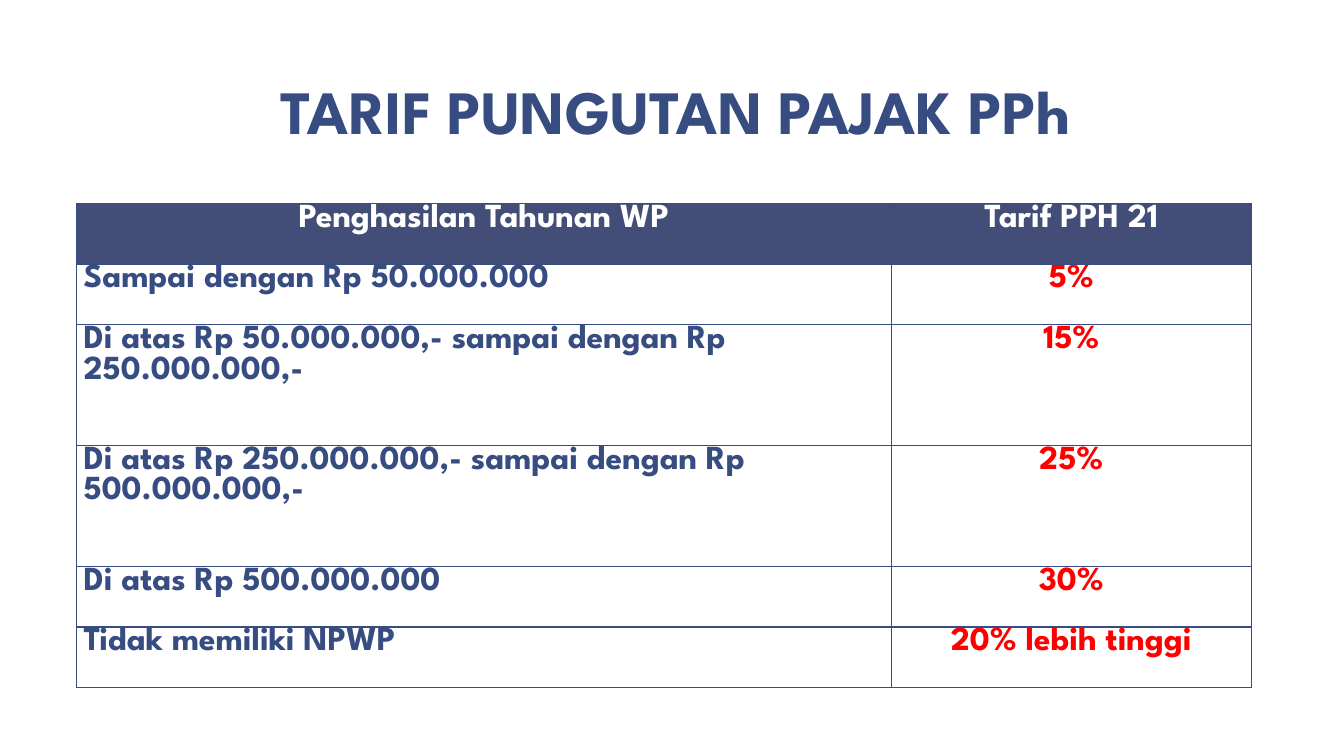
from lxml.etree import SubElement as Sub
from pptx import Presentation
from pptx.dml.color import RGBColor
from pptx.enum.text import MSO_ANCHOR as Anchor, PP_ALIGN as Align
from pptx.oxml.ns import qn
from pptx.util import Inches, Pt

TITLE = "TARIF PUNGUTAN PAJAK PPh"
ROWS = [
    ("Penghasilan Tahunan WP", "Tarif PPH 21"),
    ("Sampai dengan Rp 50.000.000", "5%"),
    ("Di atas Rp 50.000.000,- sampai dengan Rp 250.000.000,-", "15%"),
    ("Di atas Rp 250.000.000,- sampai dengan Rp 500.000.000,-", "25%"),
    ("Di atas Rp 500.000.000", "30%"),
    ("Tidak memiliki NPWP", "20% lebih tinggi"),
]
LINES = (1, 1, 2, 2, 1, 1)
UNIT = 0.6
COLS = (8.08, 3.57)
FONT = "League Spartan"
NAVY, HEAD, RED, WHITE = "374C81", "424E77", "FF0000", "FFFFFF"


def color(code):
    return RGBColor.from_string(code)


def write(frame, text, size, code, align):
    para = frame.paragraphs[0]
    para.alignment = align
    run = para.add_run()
    run.text = text
    font = run.font
    font.name, font.size, font.bold = FONT, Pt(size), True
    font.color.rgb = color(code)
    return para


def border(cell):
    """Draw a one-point line on all four sides; call before filling."""
    props = cell._tc.get_or_add_tcPr()
    for side in ("lnL", "lnR", "lnT", "lnB"):
        line = Sub(props, qn("a:" + side), w=str(Pt(1)))
        fill = Sub(line, qn("a:solidFill"))
        Sub(fill, qn("a:srgbClr"), val=NAVY)


def add_title(slide):
    box = slide.shapes.add_textbox(*map(Inches, (1.15, 0.6, 11.11, 0.93)))
    frame = box.text_frame
    frame.word_wrap = True
    frame.vertical_anchor = Anchor.BOTTOM
    frame.margin_left = frame.margin_right = Inches(0.13)
    frame.margin_top = frame.margin_bottom = Inches(0.07)
    write(frame, TITLE, 44, NAVY, Align.CENTER).line_spacing = 0.85


def add_rates(slide):
    area = (0.76, 2.02, sum(COLS), UNIT * sum(LINES))
    table = slide.shapes.add_table(
        len(ROWS), len(COLS), *map(Inches, area)).table
    table.horz_banding = False
    for col, width in zip(table.columns, COLS):
        col.width = Inches(width)
    for r, (texts, lines) in enumerate(zip(ROWS, LINES)):
        table.rows[r].height = Inches(UNIT * lines)
        for c, text in enumerate(texts):
            cell = table.cell(r, c)
            cell.margin_left = cell.margin_right = Inches(0.07)
            cell.margin_top = cell.margin_bottom = 0
            border(cell)
            cell.fill.solid()
            cell.fill.fore_color.rgb = color(WHITE if r else HEAD)
            code = (NAVY, RED)[c] if r else WHITE
            align = Align.LEFT if r and not c else Align.CENTER
            write(cell.text_frame, text, 24, code, align)


def main():
    deck = Presentation()
    deck.slide_width, deck.slide_height = Inches(13.33), Inches(7.5)
    slide = deck.slides.add_slide(deck.slide_layouts[6])
    add_title(slide)
    add_rates(slide)
    deck.save("out.pptx")


if __name__ == "__main__":
    main()
